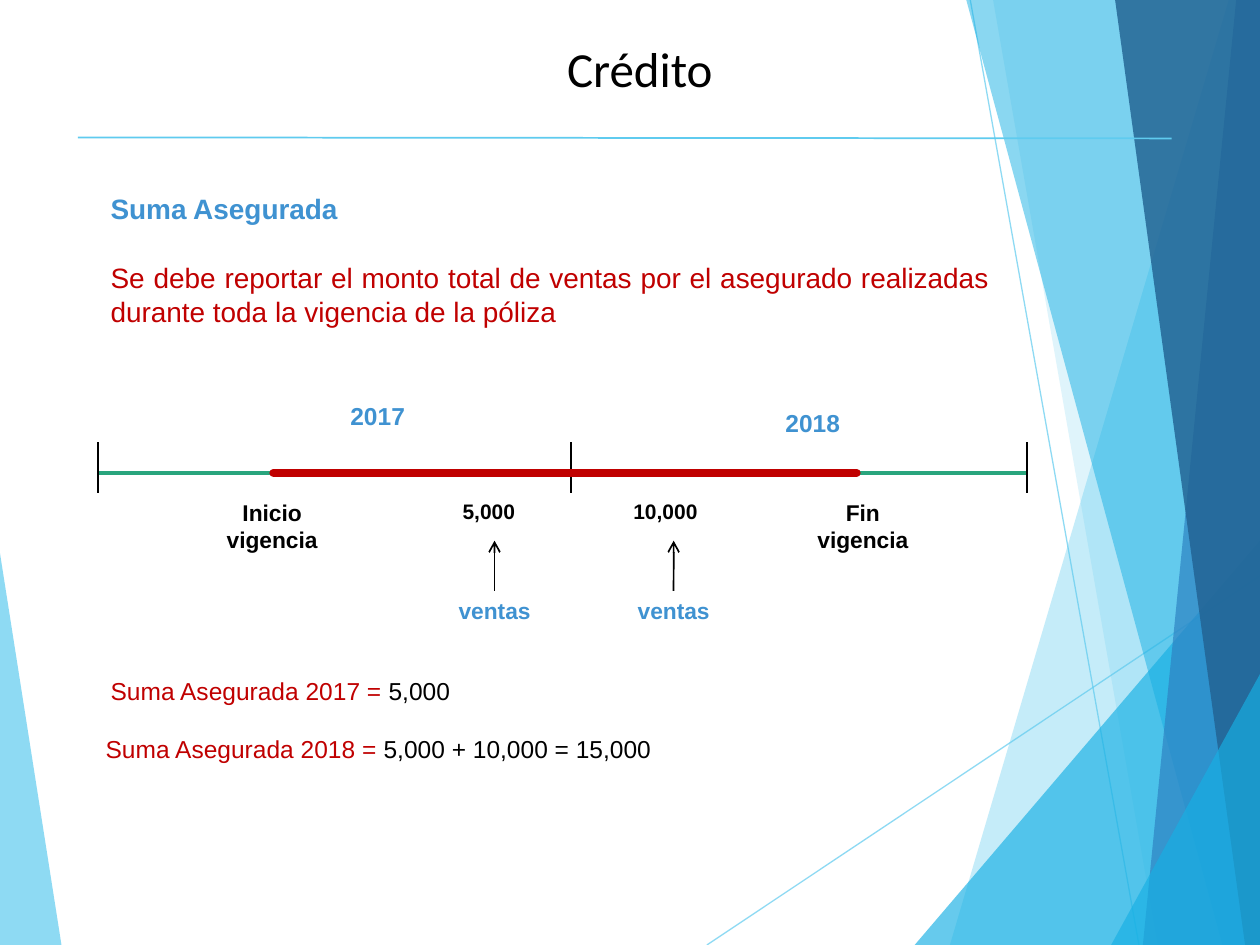
from lxml import etree
from pptx import Presentation
from pptx import util as u
from pptx.dml.color import RGBColor
from pptx.enum import shapes, text
from pptx.oxml import ns

Cm = u.Cm
COLORS = {
    "sky": "5FCBEF", "cyan": "17B0E4", "blue": "2E83C3", "navy": "226292",
    "accent": "3F92D1", "red": "C00000", "green": "29A57D", "black": "000000",
}
ALIGN = {"center": text.PP_ALIGN.CENTER, "justify": text.PP_ALIGN.JUSTIFY}


def rgb(name):
    return RGBColor.from_string(COLORS[name])


def set_alpha(sp, percent):
    """Give every plain colour of the shape an opacity in percent."""
    props = sp._element.spPr
    for color in list(props.iter(ns.qn("a:srgbClr"))):
        etree.SubElement(color, ns.qn("a:alpha"), val=str(percent * 1000))


def add_line(s, start, end, color, width, alpha=None, cap=None, arrow=False):
    line = s.shapes.add_connector(
        shapes.MSO_CONNECTOR.STRAIGHT, *(Cm(v) for v in (*start, *end)))
    line.line.color.rgb = rgb(color)
    line.line.width = u.Pt(width)
    ln = line.line._get_or_add_ln()
    if cap:
        ln.set("cap", cap)
    if arrow:
        etree.SubElement(ln, ns.qn("a:tailEnd"), type="arrow")
    if alpha:
        set_alpha(line, alpha)
    etree.SubElement(line._element.spPr, ns.qn("a:effectLst"))
    return line


def write(tf, paragraphs, size, align, font="Arial", bold=False):
    """Fill the frame; each paragraph is a list of (wording, colour) runs."""
    frame_format = {"word_wrap": True, "vertical_anchor": text.MSO_ANCHOR.TOP,
                    "auto_size": text.MSO_AUTO_SIZE.SHAPE_TO_FIT_TEXT}
    for name, value in frame_format.items():
        setattr(tf, name, value)
    for i, runs in enumerate(paragraphs):
        p = tf.add_paragraph() if i else tf.paragraphs[0]
        p.alignment = ALIGN[align]
        for wording, color in runs:
            r = p.add_run()
            r.text = wording
            run_format = {"name": font, "size": u.Pt(size), "bold": bold}
            for name, value in run_format.items():
                setattr(r.font, name, value)
            r.font.color.rgb = rgb(color)


def add_text(s, box, paragraphs, size, align="center", bold=False):
    sp = s.shapes.add_textbox(*(Cm(v) for v in box))
    write(sp.text_frame, paragraphs, size, align, bold=bold)
    return sp


def add_facets(s, x, y, w, h):
    """Translucent facets: a slanted edge closed against one side of the box."""
    def facet(side, top, bottom_x, color, alpha):
        points = [top, (bottom_x, h), (side, h), (side, top[1])]
        points = [(Cm(x + px), Cm(y + py)) for px, py in points]
        builder = s.shapes.build_freeform(*points[0], scale=1.0)
        builder.add_line_segments(points[1:], close=True)
        sp = builder.convert_to_shape()
        sp.shadow.inherit = False
        sp.fill.solid()
        sp.fill.fore_color.rgb = rgb(color)
        sp.line.fill.background()
        set_alpha(sp, alpha)

    facet(0, (0, 11.15), 1.24, "sky", 70)
    for start, end in (((14.25, h), (w, 11.61)), ((19.56, 0), (22.96, h))):
        add_line(s, (x + start[0], y + start[1]), (x + end[0], y + end[1]),
                 "sky", 0.75, alpha=70)
    for top, bottom_x, color, alpha in (
            ((24.77, 0), 19.15, "sky", 36),
            ((20.02, 0), 23.34, "sky", 20),
            ((w, 10.9), 18.44, "cyan", 66),
            ((19.48, 0), 24.64, "cyan", 50),
            ((24.92, 0), 23.04, "blue", 70),
            ((22.48, 0), 25.1, "navy", 82),
            ((w, 13.59), 22.4, "cyan", 66)):
        facet(w, top, bottom_x, color, alpha)


def add_heading(s, x, y, w, h):
    title = s.shapes.title
    for name, value in zip(("left", "top", "width", "height"), (x, y, w, h)):
        setattr(title, name, Cm(value))
    write(title.text_frame, [[("Crédito", "black")]], 28, "center", "Calibri")
    add_line(s, (x - 2.01, y + 2.13), (x + 20.04, y + 2.15), "sky", 1)


def add_intro(s, x, y, w):
    add_text(s, (x, y, w, 0.94), [[("Suma Asegurada", "accent")]],
             16, "justify", bold=True)
    add_text(s, (x, y + 1.4, w, 1.63),
             [[("Se debe reportar el monto total de ventas por el asegurado "
                "realizadas durante toda la vigencia de la póliza", "red")]],
             16, "justify")


def add_timeline(s, x, y, w):
    axis, tick_top, tick_bottom = y + 1.58, y + 0.97, y + 1.98
    add_line(s, (x, axis), (x + w, axis), "green", 2)
    for dx in (0, 9.53, w):
        add_line(s, (x + dx, tick_top), (x + dx, tick_bottom), "black", 1)
    add_line(s, (x + 3.53, axis), (x + 15.29, axis), "red", 4.5, cap="rnd")

    label_w = 2.59
    for dx, dy, height, lines, size, color in (
            (4.34, 0, 0.86, ["2017"], 14, "accent"),
            (13.11, 0.15, 0.86, ["2018"], 14, "accent"),
            (2.21, 1.98, 1.37, ["Inicio vigencia"], 13, "black"),
            (14.12, 1.98, 1.37, ["Fin", "vigencia"], 13, "black"),
            (6.58, 1.98, 0.76, ["5,000"], 12, "black"),
            (10.14, 1.98, 0.76, ["10,000"], 12, "black")):
        add_text(s, (x + dx, y + dy, label_w, height),
                 [[(line, color)] for line in lines], size, bold=True)

    sales_w, sales_y = 2.26, y + 3.96
    for dx in (6.86, 10.47):
        sales = add_text(s, (x + dx, sales_y, sales_w, 0.81),
                         [[("ventas", "accent")]], 13, bold=True)
        center = x + dx + sales_w / 2
        arrow = add_line(s, (center, sales_y), (center, y + 2.95),
                         "black", 1, arrow=True)
        arrow.begin_connect(sales, 0)


def add_totals(s, x, y, w):
    for dx, dy, year, total in ((0, 0, 2017, "5,000"),
                                (-0.1, 1.17, 2018, "5,000 + 10,000 = 15,000")):
        add_text(s, (x + dx, y + dy, w, 0.86),
                 [[(f"Suma Asegurada {year} = ", "red"), (total, "black")]],
                 14, "justify")


def main():
    prs = Presentation()
    width, height = 25.4, 19.05
    prs.slide_width, prs.slide_height = Cm(width), Cm(height)
    s = prs.slides.add_slide(prs.slide_layouts[5])
    left, text_w = 1.98, 18.21
    add_facets(s, 0, 0, width, height)
    add_heading(s, 3.58, 0.64, 18.64, 1.45)
    add_intro(s, left, 3.73, text_w)
    add_timeline(s, left, 7.95, 18.72)
    add_totals(s, left, 13.51, text_w)
    prs.save("out.pptx")


if __name__ == "__main__":
    main()
